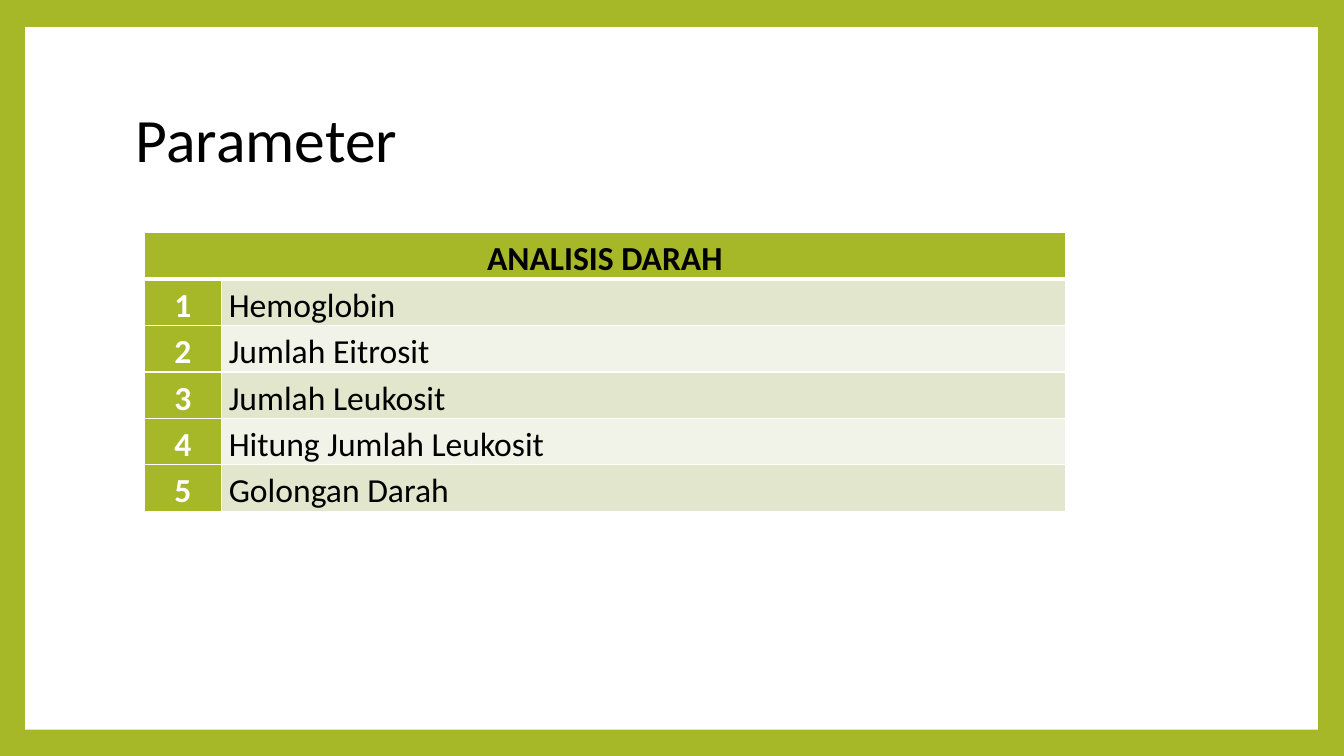
from lxml.etree import fromstring
from pptx import Presentation
from pptx.dml.color import RGBColor as RGB
from pptx.enum.shapes import MSO_SHAPE as SHAPE
from pptx.enum.text import MSO_ANCHOR as ANCHOR, PP_ALIGN as ALIGN
from pptx.oxml.ns import nsdecls
from pptx.util import Inches, Pt

TITLE = "Parameter"
HEADER = "ANALISIS DARAH"
PARAMETERS = [
    "Hemoglobin",
    "Jumlah Eitrosit",
    "Jumlah Leukosit",
    "Hitung Jumlah Leukosit",
    "Golongan Darah",
]
COLORS = {"green": "A6B727", "white": "FFFFFF", "black": "000000",
          "odd": "E1E6CD", "even": "F1F3E8"}
FONT = "Calibri"
COL_WIDTHS = (0.77, 8.37)
ROW_HEIGHT = 0.45
CELL_FORMAT = {"margin_left": Inches(0.07), "margin_right": Inches(0.07),
               "margin_top": 0, "margin_bottom": 0}
TITLE_STYLE = {"size": Pt(44)}
HEADER_STYLE = {"size": Pt(24), "bold": True}
NUMBER_STYLE = {"size": Pt(24), "bold": True}
NAME_STYLE = {"size": Pt(24), "bold": False}


def paint(fill, color):
    fill.solid()
    fill.fore_color.rgb = RGB.from_string(COLORS[color])


def write(tf, text, color, style, align, spacing):
    p = tf.paragraphs[0]
    p.alignment = align
    p.line_spacing = spacing
    r = p.add_run()
    r.text = text
    r.font.name = FONT
    r.font.color.rgb = RGB.from_string(COLORS[color])
    for name, value in style.items():
        setattr(r.font, name, value)


def add_borders(cell, top, bottom):
    tc_pr = cell._tc.get_or_add_tcPr()
    widths = {"lnL": 1, "lnR": 1, "lnT": top, "lnB": bottom}
    for i, (side, width) in enumerate(widths.items()):
        tc_pr.insert(i, fromstring(
            f'<a:{side} {nsdecls("a")} w="{Pt(width)}"><a:solidFill>'
            f'<a:srgbClr val="{COLORS["white"]}"/></a:solidFill></a:{side}>'))


def fill_cell(cell, text, fill, color, style, align):
    for name, value in CELL_FORMAT.items():
        setattr(cell, name, value)
    paint(cell.fill, fill)
    write(cell.text_frame, text, color, style, align, 1.15)


def add_title(s):
    box = s.shapes.add_textbox(Inches(1.25), Inches(0.67), Inches(10.8), Inches(1.48))
    tf = box.text_frame
    tf.word_wrap = True
    tf.vertical_anchor = ANCHOR.MIDDLE
    write(tf, TITLE, "black", TITLE_STYLE, ALIGN.LEFT, 0.9)


def add_parameters(s):
    rows = len(PARAMETERS) + 1
    table = s.shapes.add_table(rows, 2, Inches(1.43), Inches(2.31),
                               Inches(sum(COL_WIDTHS)), Inches(rows * ROW_HEIGHT)).table
    for col, width in zip(table.columns, COL_WIDTHS):
        col.width = Inches(width)
    for i, row in enumerate(table.rows):
        row.height = Inches(ROW_HEIGHT)
        for cell in row.cells:
            add_borders(cell, 3 if i == 1 else 1, 3 if i == 0 else 1)
    table.cell(0, 0).merge(table.cell(0, 1))
    fill_cell(table.cell(0, 0), HEADER, "green", "black", HEADER_STYLE, ALIGN.CENTER)
    for i, name in enumerate(PARAMETERS, 1):
        band = "odd" if i % 2 else "even"
        fill_cell(table.cell(i, 0), str(i), "green", "white", NUMBER_STYLE, ALIGN.CENTER)
        fill_cell(table.cell(i, 1), name, band, "black", NAME_STYLE, ALIGN.LEFT)


def main():
    prs = Presentation()
    prs.slide_width, prs.slide_height = Inches(13.33), Inches(7.5)
    s = prs.slides.add_slide(prs.slide_layouts[6])
    paint(s.background.fill, "green")
    sp = s.shapes.add_shape(SHAPE.RECTANGLE, Inches(0.25), Inches(0.27),
                            Inches(12.82), Inches(6.97))
    sp.shadow.inherit = False
    paint(sp.fill, "white")
    sp.line.fill.background()
    add_title(s)
    add_parameters(s)
    prs.save("out.pptx")


if __name__ == "__main__":
    main()
